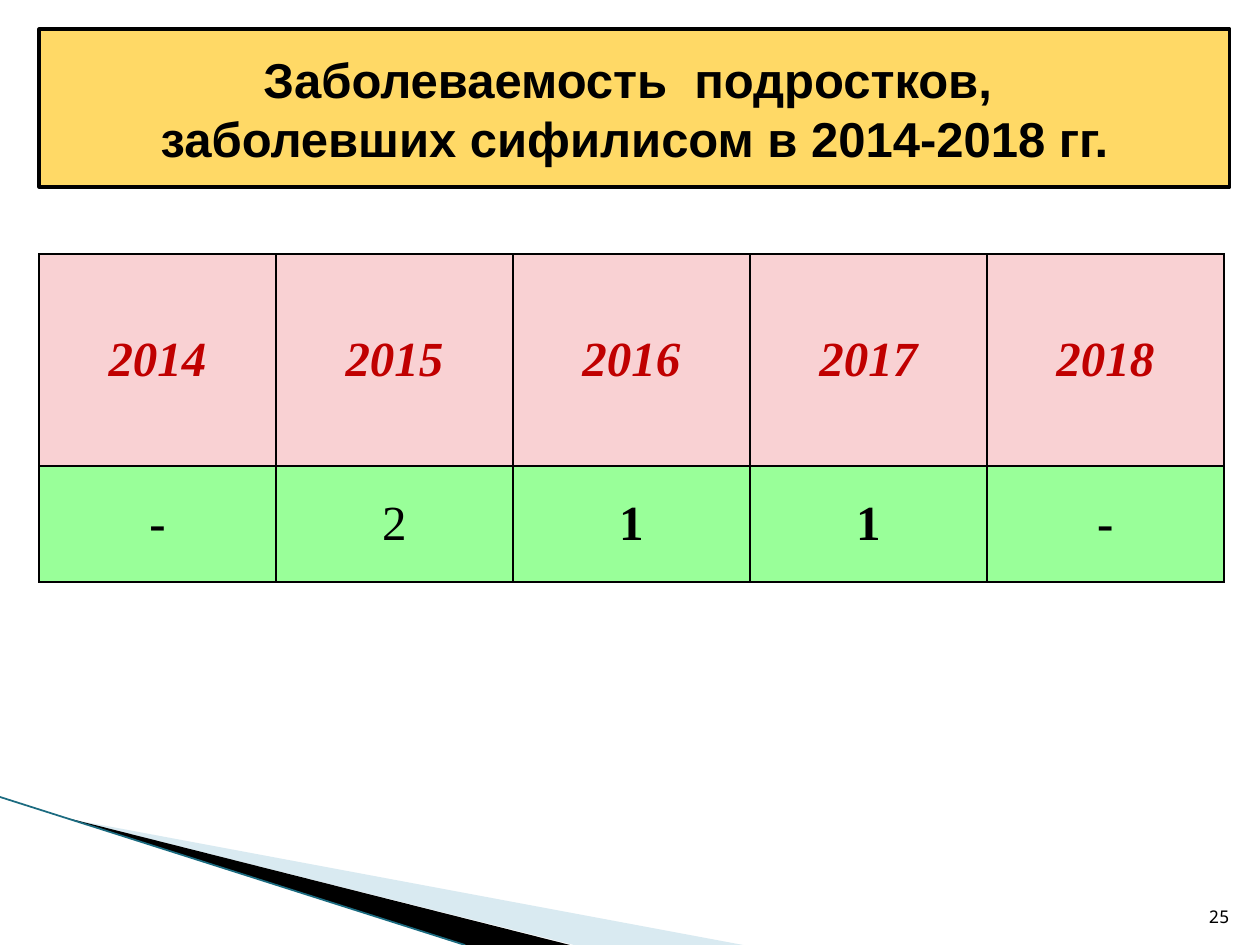
from lxml import etree
from pptx import Presentation
from pptx.dml.color import RGBColor
from pptx.enum.shapes import MSO_CONNECTOR
from pptx.enum.text import MSO_ANCHOR, PP_ALIGN
from pptx.oxml import parse_xml
from pptx.oxml.ns import nsdecls, qn
from pptx.util import Emu, Pt

PX = 914400 / 126
COLORS = {
    "black": "000000", "title": "FFC000", "year": "C00000",
    "head": "F9D1D3", "count": "99FF99", "wedge": "A0CBDC", "edge": "1B6B80",
}


def px(*values):
    return [Emu(round(value * PX)) for value in values]


def write(paragraph, text, align, color="black", **format_values):
    paragraph.alignment = align
    run = paragraph.add_run()
    run.text = text
    for name, value in format_values.items():
        setattr(run.font, name, value)
    run.font.color.rgb = RGBColor.from_string(COLORS[color])


presentation = Presentation()
presentation.slide_width, presentation.slide_height = px(1260, 945)
slide = presentation.slides.add_slide(presentation.slide_layouts[5])
shapes = slide.shapes

# Corner wedges
wedges = [
    ("wedge", 40, [(69, 819), (743, 945), (574, 945)]),
    ("black", 100, [(67, 818), (570, 945), (466, 945)]),
]
for color, opacity, points in wedges:
    builder = shapes.build_freeform(*points[0], scale=PX)
    builder.add_line_segments(points[1:], close=True)
    wedge = builder.convert_to_shape()
    wedge.shadow.inherit = False
    wedge.line.fill.background()
    wedge.fill.solid()
    wedge.fill.fore_color.rgb = RGBColor.from_string(COLORS[color])
    if opacity < 100:
        fill_color = wedge.fill._xPr.find(".//" + qn("a:srgbClr"))
        etree.SubElement(fill_color, qn("a:alpha"), val=str(opacity * 1000))

edge = shapes.add_connector(MSO_CONNECTOR.STRAIGHT, *px(0, 797, 465, 945))
edge.line.color.rgb = RGBColor.from_string(COLORS["edge"])
edge.line.width = Pt(1)
etree.SubElement(edge._element.spPr, qn("a:effectLst"))

# Title
title = shapes.title
title.left, title.top, title.width, title.height = px(39, 29, 1191, 158)
title.fill.solid()
title.fill.fore_color.rgb = RGBColor.from_string(COLORS["title"])
title_color = title._element.spPr.find(".//" + qn("a:srgbClr"))
etree.SubElement(title_color, qn("a:alpha"), val="60000")
title.line.color.rgb = RGBColor.from_string(COLORS["black"])
title.line.width = Pt(1.75)
frame = title.text_frame
frame.vertical_anchor = MSO_ANCHOR.MIDDLE
frame.word_wrap = True
title_lines = ["Заболеваемость  подростков, ", "заболевших сифилисом в 2014-2018 гг."]
for index, text in enumerate(title_lines):
    paragraph = frame.add_paragraph() if index else frame.paragraphs[0]
    paragraph.space_before = Pt(0)
    write(paragraph, text, PP_ALIGN.CENTER, name="Arial", size=Pt(28), bold=True)

# Table of cases by year
rows = [["2014", "2015", "2016", "2017", "2018"], ["-", "2", "1", "1", "-"]]
table = shapes.add_table(2, 5, *px(39, 254, 1185, 328)).table
table.first_row = table.horz_banding = False
for row, height in zip(table.rows, px(212, 116)):
    row.height = height
for column in table.columns:
    column.width = px(237)[0]

for row_index, texts in enumerate(rows):
    is_head = row_index == 0
    for column_index, text in enumerate(texts):
        cell = table.cell(row_index, column_index)
        cell.vertical_anchor = MSO_ANCHOR.MIDDLE
        write(cell.text_frame.paragraphs[0], text, PP_ALIGN.CENTER,
              "year" if is_head else "black", name="Times New Roman",
              size=Pt(28), bold=text != "2", italic=is_head)
        properties = cell._tc.get_or_add_tcPr()
        for side in ("lnL", "lnR", "lnT", "lnB"):
            properties.append(parse_xml(
                f'<a:{side} {nsdecls("a")} w="12700"><a:solidFill>'
                f'<a:srgbClr val="{COLORS["black"]}"/></a:solidFill></a:{side}>'))
        cell.fill.solid()
        cell.fill.fore_color.rgb = RGBColor.from_string(
            COLORS["head" if is_head else "count"])

# Slide number
number = shapes.add_textbox(*px(1192, 883, 50, 50)).text_frame
number.word_wrap = True
number.vertical_anchor = MSO_ANCHOR.BOTTOM
write(number.paragraphs[0], "25", PP_ALIGN.RIGHT, name="Noto Sans Mono", size=Pt(10))

presentation.save("out.pptx")
